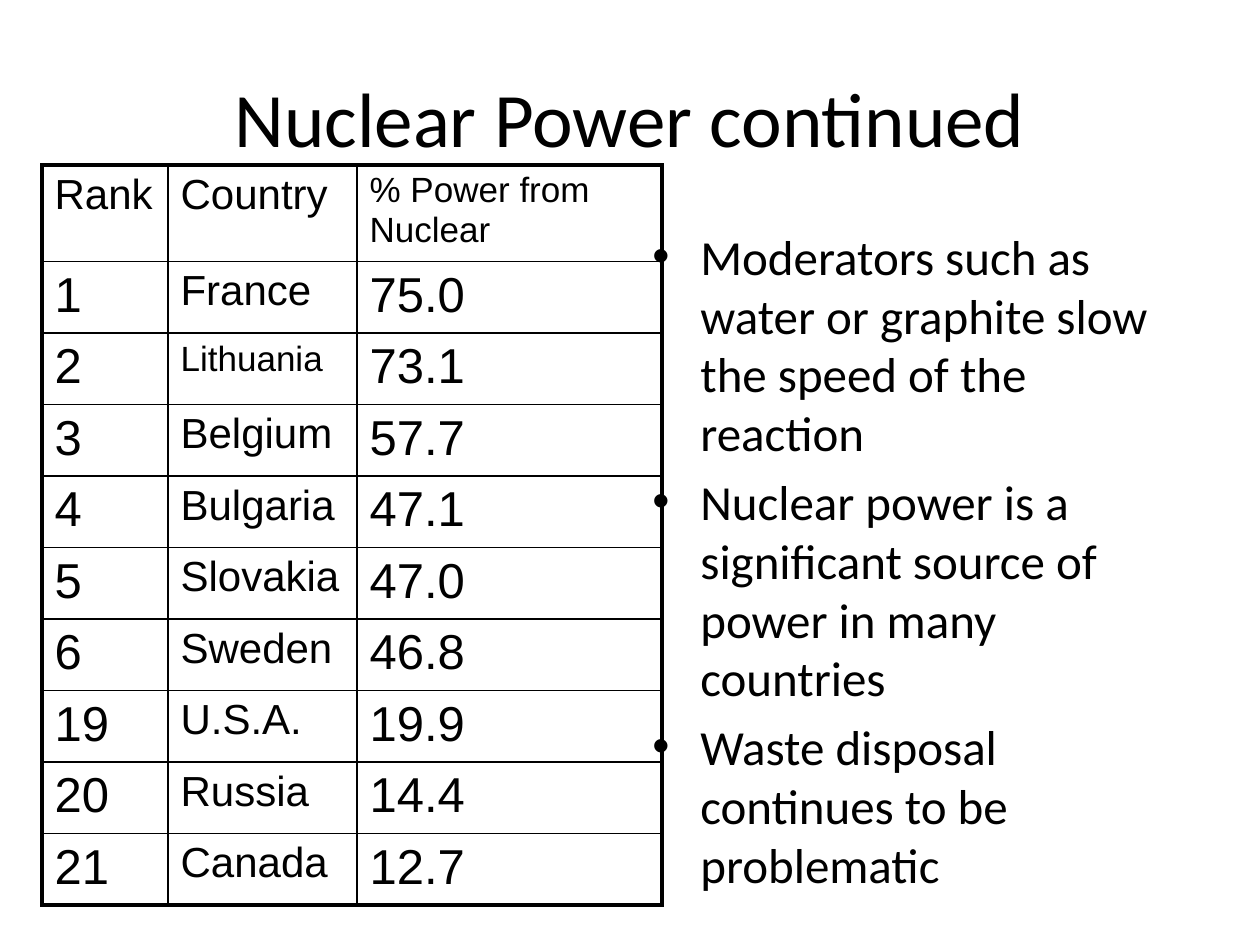
from lxml.etree import SubElement
from pptx import Presentation
from pptx.dml.color import RGBColor
from pptx.enum.text import MSO_ANCHOR, PP_ALIGN
from pptx.oxml import parse_xml
from pptx.oxml.ns import nsdecls, qn
from pptx.util import Emu, Pt

HEADING = "Nuclear Power continued"
POINTS = [
    "Moderators such as water or graphite slow the speed of the reaction",
    "Nuclear power is a significant source of power in many countries",
    "Waste disposal continues to be problematic",
]
RANKING = [
    ("Rank", "Country", "% Power from Nuclear"),
    ("1", "France", "75.0"),
    ("2", "Lithuania", "73.1"),
    ("3", "Belgium", "57.7"),
    ("4", "Bulgaria", "47.1"),
    ("5", "Slovakia", "47.0"),
    ("6", "Sweden", "46.8"),
    ("19", "U.S.A.", "19.9"),
    ("20", "Russia", "14.4"),
    ("21", "Canada", "12.7"),
]
HEADER_SIZES = (24, 24, 20)
COUNTRY_SIZES = (28, 24, 28)
SMALLER = {"Lithuania": 20}
COLUMN_WIDTHS = (126, 189, 305)
ROW_HEIGHT = 62
OUTER, INNER = 2.25, 1
INK = "000000"


def px(length):
    return Emu(round(length * 914400 / 126))


def colour(code):
    return RGBColor.from_string(code)


def write(paragraph, words, size, font):
    run = paragraph.add_run()
    run.text = words
    run.font.size = Pt(size)
    run.font.name = font
    run.font.color.rgb = colour(INK)


def space_before(paragraph, percent):
    spacing = SubElement(paragraph._p.get_or_add_pPr(), qn("a:spcBef"))
    SubElement(spacing, qn("a:spcPct")).set("val", str(percent * 1000))


def add_bullet(paragraph, indent):
    properties = paragraph._p.get_or_add_pPr()
    properties.set("marL", str(px(indent)))
    properties.set("indent", str(-px(indent)))
    SubElement(properties, qn("a:buFont")).set("typeface", "Arial")
    SubElement(properties, qn("a:buChar")).set("char", "•")


def set_borders(cell, widths):
    properties = cell._tc.get_or_add_tcPr()
    for place, (side, width) in enumerate(zip("LRTB", widths)):
        properties.insert(place, parse_xml(
            f'<a:ln{side} {nsdecls("a")} w="{Pt(width)}"><a:solidFill>'
            f'<a:srgbClr val="{INK}"/></a:solidFill></a:ln{side}>'))


def add_text(slide, left, top, width, height):
    frame = slide.shapes.add_textbox(px(left), px(top), px(width), px(height)).text_frame
    frame.word_wrap = True
    return frame


def add_ranking(slide):
    last_row, last_column = len(RANKING) - 1, len(COLUMN_WIDTHS) - 1
    holder = slide.shapes.add_table(
        len(RANKING), len(COLUMN_WIDTHS), px(42), px(165), px(sum(COLUMN_WIDTHS)), px(740))
    table = holder.table
    table.first_row = table.horz_banding = False
    for column, width in zip(table.columns, COLUMN_WIDTHS):
        column.width = px(width)
    for r, entries in enumerate(RANKING):
        table.rows[r].height = px(ROW_HEIGHT)
        sizes = COUNTRY_SIZES if r else HEADER_SIZES
        for c, (entry, size) in enumerate(zip(entries, sizes)):
            cell = table.cell(r, c)
            cell.fill.background()
            edges = (c == 0, c == last_column, r == 0, r == last_row)
            set_borders(cell, [OUTER if edge else INNER for edge in edges])
            paragraph = cell.text_frame.paragraphs[0]
            space_before(paragraph, 20)
            write(paragraph, entry, SMALLER.get(entry, size), "Arial")
    holder.height = px(740)


def main():
    deck = Presentation()
    deck.slide_width, deck.slide_height = px(1260), px(945)
    slide = deck.slides.add_slide(deck.slide_layouts[6])

    heading = add_text(slide, 63, 38, 1134, 157)
    heading.vertical_anchor = MSO_ANCHOR.MIDDLE
    heading.paragraphs[0].alignment = PP_ALIGN.CENTER
    write(heading.paragraphs[0], HEADING, 44, "Calibri")

    points = add_text(slide, 640, 220, 557, 624)
    for i, point in enumerate(POINTS):
        paragraph = points.add_paragraph() if i else points.paragraphs[0]
        space_before(paragraph, 20)
        add_bullet(paragraph, 48)
        write(paragraph, point, 28, "Calibri")

    add_ranking(slide)
    deck.save("out.pptx")


if __name__ == "__main__":
    main()
